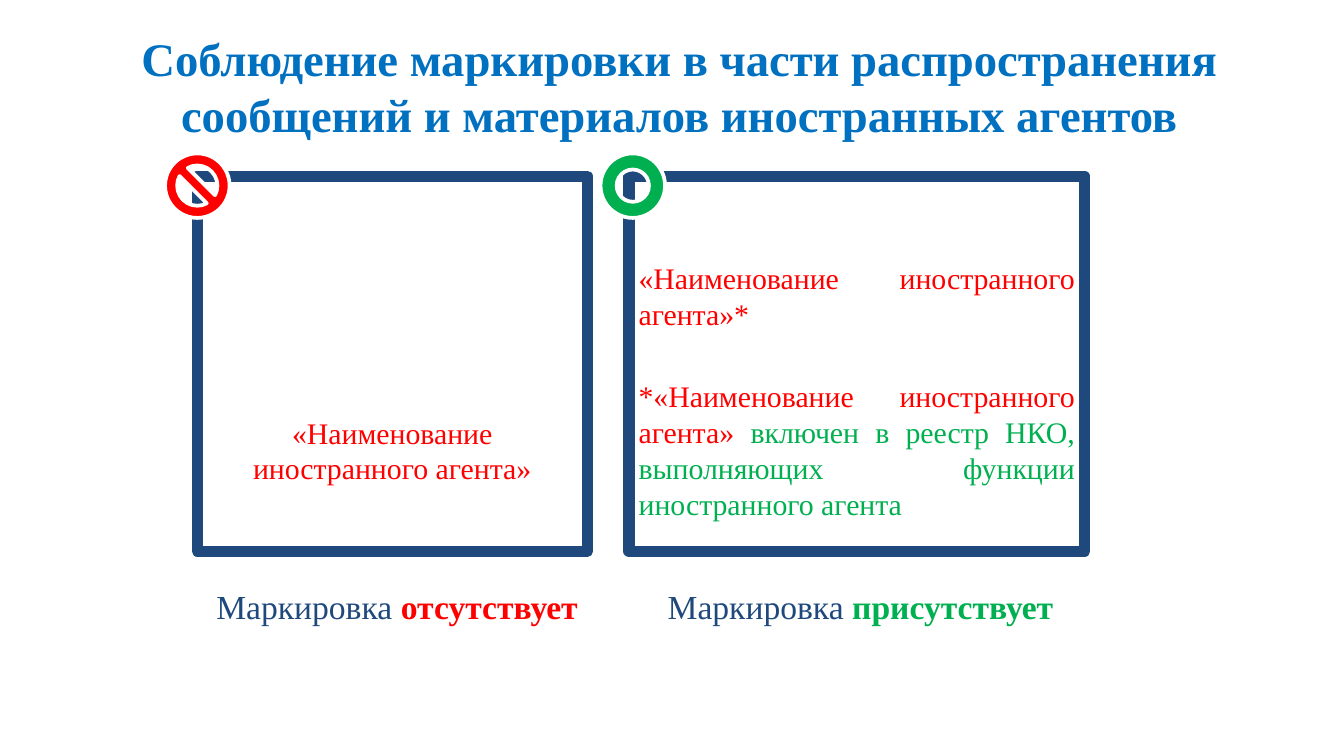
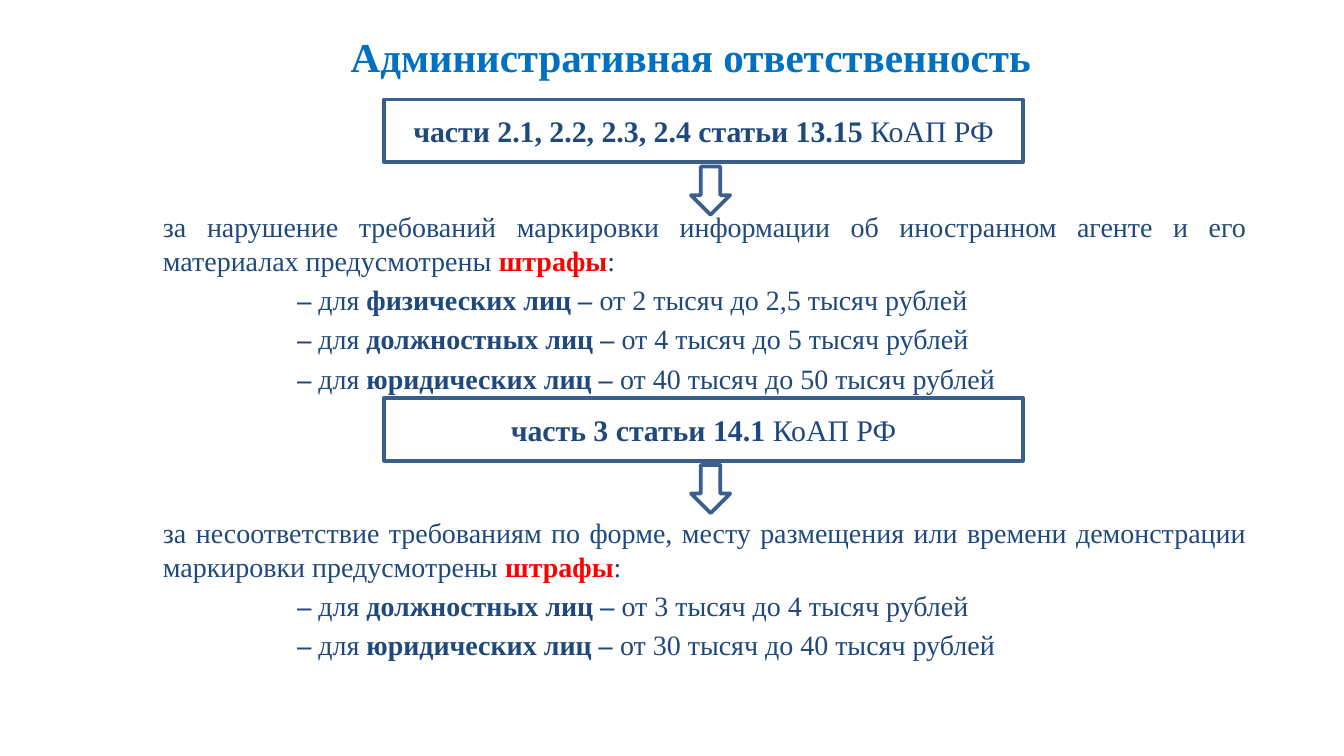
from pptx import Presentation
from pptx.dml.color import RGBColor
from pptx.enum.shapes import MSO_SHAPE
from pptx.enum.text import MSO_ANCHOR, MSO_AUTO_SIZE, PP_ALIGN
from pptx.util import Cm, Pt

FONT = "Times New Roman"
TITLE_BLUE = RGBColor(0x00, 0x70, 0xC0)
NAVY = RGBColor(0x1F, 0x49, 0x7D)
STEEL = RGBColor(0x3A, 0x5F, 0x8C)
RED = RGBColor(0xFF, 0x00, 0x00)
GREEN = RGBColor(0x00, 0xB0, 0x50)
WHITE = RGBColor(0xFF, 0xFF, 0xFF)

RECT, DONUT = MSO_SHAPE.RECTANGLE, MSO_SHAPE.DONUT
NO_SIGN, DOWN_ARROW = MSO_SHAPE.NO_SYMBOL, MSO_SHAPE.DOWN_ARROW
LEFT, CENTER, JUSTIFY = PP_ALIGN.LEFT, PP_ALIGN.CENTER, PP_ALIGN.JUSTIFY
TOP, MIDDLE = MSO_ANCHOR.TOP, MSO_ANCHOR.MIDDLE
NO_FIT = MSO_AUTO_SIZE.NONE

WIDE_INSETS = (0.25, 0.13, 0.25, 0.13)
SLIM_INSETS = (0.18, 0.08, 0.18, 0.08)
TITLE_ONLY = 5


def set_frame(tf, insets=WIDE_INSETS, anchor=TOP, wrap=True):
    """Set the insets, anchor and wrapping of a text frame."""
    tf.auto_size = NO_FIT
    tf.word_wrap = wrap
    tf.vertical_anchor = anchor
    tf.margin_left, tf.margin_top, tf.margin_right, tf.margin_bottom = map(Cm, insets)


def add_text(tf, runs, size=16, color=NAVY, align=LEFT, before=0, indent=0):
    """Write a paragraph of (text, bold, colour) runs; the colour may be left out."""
    p = tf.paragraphs[0]
    if p.runs:
        p = tf.add_paragraph()
    p.alignment = align
    p.space_before = Pt(before)
    if indent:
        p._p.get_or_add_pPr().set("marL", str(Cm(indent)))
    for text, bold, *own in runs:
        r = p.add_run()
        r.text = text
        r.font.name = FONT
        r.font.size = Pt(size)
        r.font.bold = bold
        r.font.color.rgb = own[0] if own else color


def add_slide(prs, title, box, size):
    """Add a title-only slide with its title placed and formatted."""
    s = prs.slides.add_slide(prs.slide_layouts[TITLE_ONLY])
    sp = s.shapes.title
    sp.left, sp.top, sp.width, sp.height = map(Cm, box)
    set_frame(sp.text_frame)
    add_text(sp.text_frame, [(title, True)], size=size, color=TITLE_BLUE, align=CENTER)
    return s


def add_shape(s, kind, box, line, width=2, fill=None, adj=()):
    """Add a flat preset shape with an outline and an optional fill."""
    sp = s.shapes.add_shape(kind, *map(Cm, box))
    sp.shadow.inherit = False
    if fill is None:
        sp.fill.background()
    else:
        sp.fill.solid()
        sp.fill.fore_color.rgb = fill
    sp.line.color.rgb = line
    sp.line.width = Pt(width)
    for i, value in enumerate(adj):
        sp.adjustments[i] = value
    return sp


def add_box(s, box, **frame):
    """Add a text box and return its text frame."""
    tf = s.shapes.add_textbox(*map(Cm, box)).text_frame
    set_frame(tf, **frame)
    return tf


def add_example(s, left, width, text_top, paragraphs, align):
    """Add a framed sample of a message."""
    tf = add_shape(s, RECT, (left, 3.33, width, 7.09), NAVY, 6).text_frame
    set_frame(tf, insets=(0.18, text_top, 0.18, 0.08))
    for i, runs in enumerate(paragraphs):
        add_text(tf, runs, align=align, before=25 if i else 0)


def add_caption(s, left, width, state, color):
    """Add the line below a sample that says whether it is marked."""
    tf = add_box(s, (left, 10.95, width, 0.99), wrap=False)
    add_text(tf, [("Маркировка ", False), (state, True, color)], size=18)


def add_sign(s, kind, left, color, adj):
    """Add the round sign at the corner of a sample."""
    add_shape(s, kind, (left, 2.9, 1.22, 1.22), WHITE, fill=color, adj=[adj])


def add_fines(s, top, offence, fines):
    """Add the offence and the indented list of its fines."""
    tf = add_box(s, (2.9, top, 20.85, 4.9), insets=SLIM_INSETS)
    add_text(tf, [(offence + " предусмотрены ", False), ("штрафы", True, RED), (":", False)],
             size=15, align=JUSTIFY)
    for persons, amount in fines:
        runs = [("– ", True), ("для ", False), (persons + " лиц – ", True),
                (amount + " рублей", False)]
        add_text(tf, runs, size=15, align=JUSTIFY, before=3, indent=2.54)


def add_article(s, top, article):
    """Add an article of the code with the arrow below it."""
    add_shape(s, DOWN_ARROW, (13.06, top + 1.27, 0.74, 0.91), STEEL, fill=WHITE, adj=[0.5, 0.5])
    tf = add_shape(s, RECT, (7.26, top, 12.07, 1.19), STEEL, fill=WHITE).text_frame
    set_frame(tf, anchor=MIDDLE)
    add_text(tf, [(article + " ", True), ("КоАП РФ", False)], align=CENTER)


def build_marking(prs):
    """Build the slide on the marking of messages."""
    s = add_slide(prs, "Соблюдение маркировки в части распространения сообщений "
                  "и материалов иностранных агентов", (2.18, 0.43, 21.31, 2.21), 25)
    name = "«Наименование иностранного агента»"
    add_example(s, 3.73, 7.37, 4.5, [[(name, False, RED)]], CENTER)
    add_example(s, 11.89, 8.61, 1.58, [
        [(name + "*", False, RED)],
        [("*" + name + " ", False, RED),
         ("включен в реестр НКО, выполняющих функции иностранного агента", False, GREEN)],
    ], JUSTIFY)
    add_caption(s, 3.84, 7.32, "отсутствует", RED)
    add_caption(s, 12.37, 7.77, "присутствует", GREEN)
    add_sign(s, NO_SIGN, 3.12, RED, 0.188)
    add_sign(s, DONUT, 11.35, GREEN, 0.25)


def build_liability(prs):
    """Build the slide on administrative liability."""
    s = add_slide(prs, "Административная ответственность", (6.25, 0.46, 13.61, 1.45), 22)
    add_fines(s, 3.89, "за нарушение требований маркировки информации "
              "об иностранном агенте и его материалах", [
                  ("физических", "от 2 тысяч до 2,5 тысяч"),
                  ("должностных", "от 4 тысяч до 5 тысяч"),
                  ("юридических", "от 40 тысяч до 50 тысяч")])
    add_fines(s, 9.67, "за несоответствие требованиям по форме, месту размещения "
              "или времени демонстрации маркировки", [
                  ("должностных", "от 3 тысяч до 4 тысяч"),
                  ("юридических", "от 30 тысяч до 40 тысяч")])
    articles = ["части 2.1, 2.2, 2.3, 2.4 статьи 13.15", "часть 3 статьи 14.1"]
    for i, article in enumerate(articles):
        add_article(s, 1.88 + i * 5.64, article)


def main():
    """Build and save the presentation."""
    prs = Presentation()
    prs.slide_width, prs.slide_height = Cm(25.4), Cm(14.29)
    build_marking(prs)
    build_liability(prs)
    prs.save("out.pptx")


if __name__ == "__main__":
    main()
